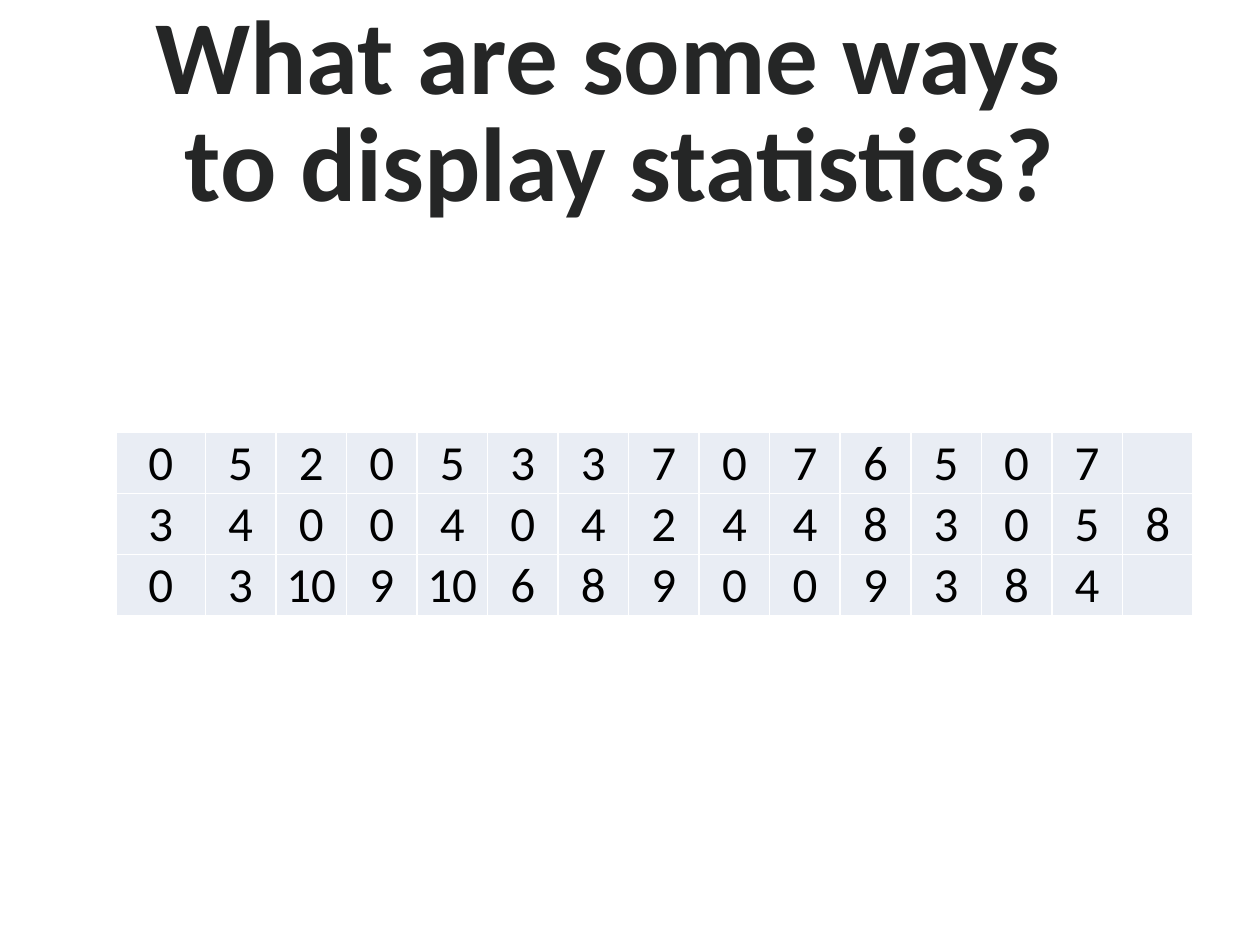
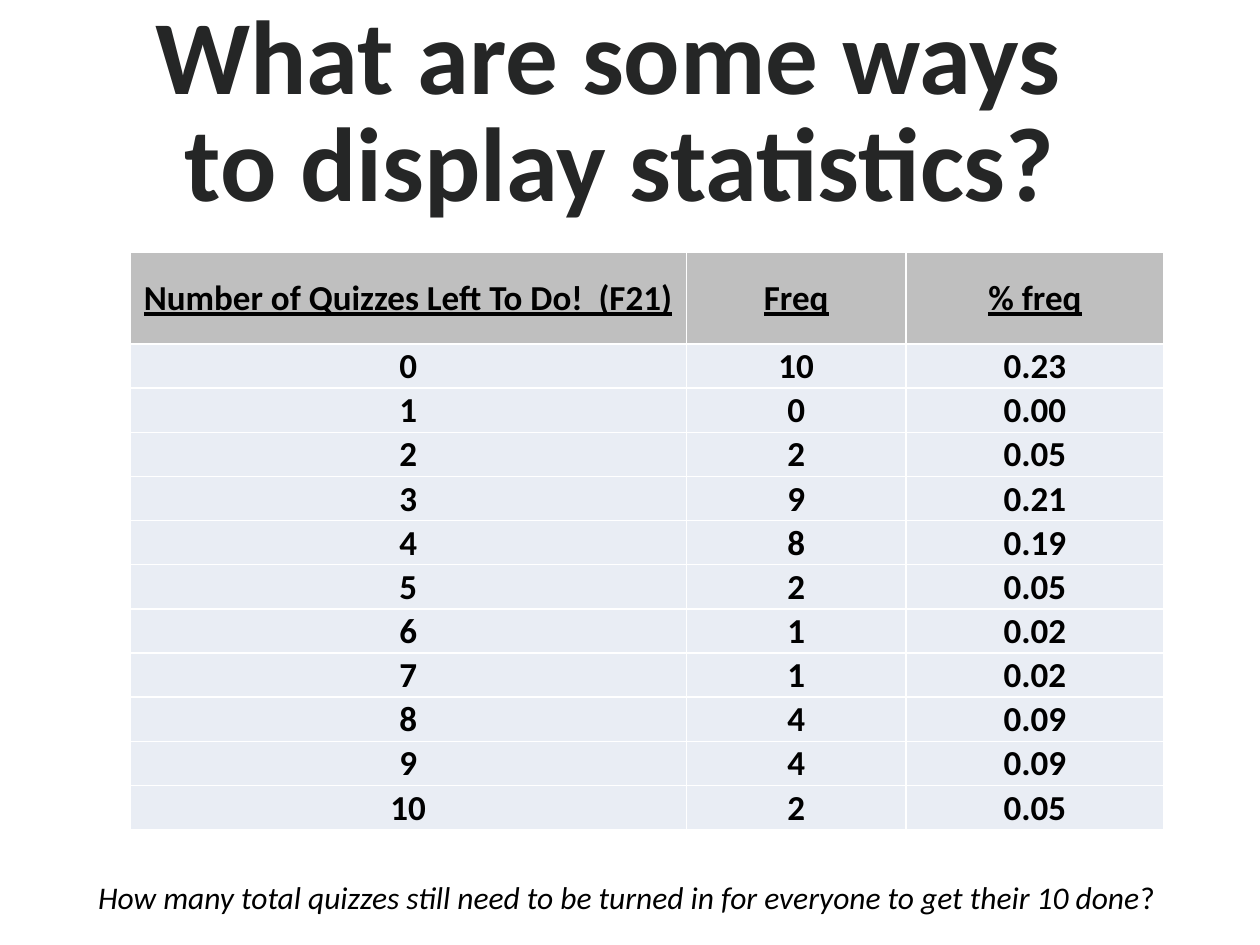
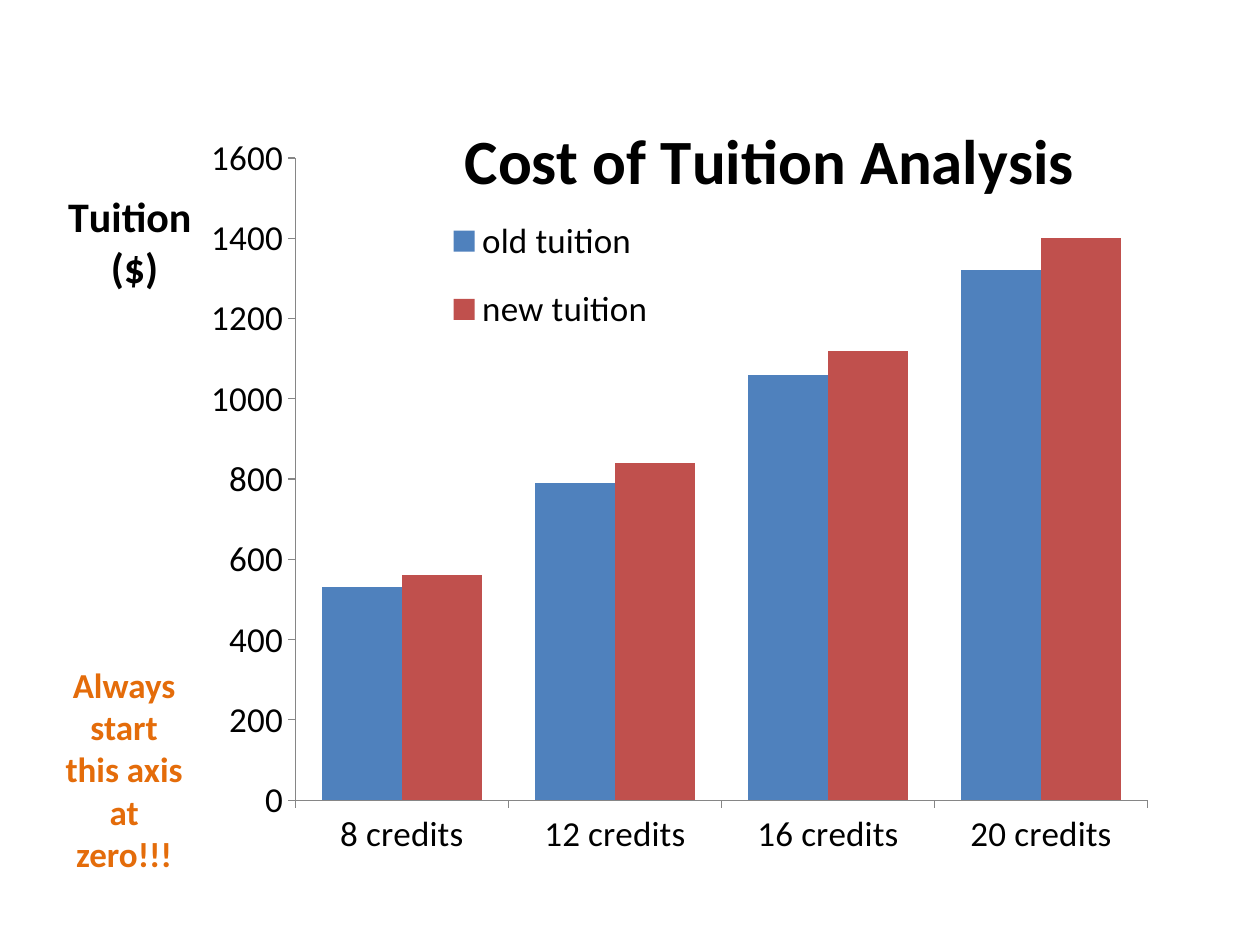
from lxml.etree import SubElement
from pptx import Presentation
from pptx.chart.data import CategoryChartData
from pptx.dml.color import RGBColor
from pptx.enum.chart import XL_CHART_TYPE, XL_LEGEND_POSITION, XL_TICK_MARK
from pptx.enum.text import MSO_ANCHOR, MSO_AUTO_SIZE, PP_ALIGN
from pptx.oxml import parse_xml
from pptx.oxml.ns import nsdecls, qn
from pptx.util import Inches, Pt

FONT = "Calibri"
COLORS = {
    "title": "252626",
    "text": "000000",
    "cell": "E9EDF4",
    "header": "BFBFBF",
    "old": "4F81BD",
    "new": "C0504D",
    "note": "E46C0A",
    "axis": "868686",
}
TITLE_ONLY, BLANK = 5, 6
TITLE_LINES = ["What are some ways ", "to display statistics?"]
TITLE_BOX = (0.42, 0.58, 9, 1.83)
LINE = 20.4

QUIZZES_LEFT = [
    "0 5 2 0 5 3 3 7 0 7 6 5 0 7".split(),
    "3 4 0 0 4 0 4 2 4 4 8 3 0 5 8".split(),
    "0 3 10 9 10 6 8 9 0 0 9 3 8 4".split(),
]
FREQ_HEADER = ["Number of Quizzes Left To Do!  (F21)", "Freq", "% freq"]
FREQUENCIES = [10, 0, 2, 9, 8, 2, 1, 1, 4, 4, 2]
CREDITS = ["8 credits", "12 credits", "16 credits", "20 credits"]
TUITION = {"old": [530, 790, 1060, 1320], "new": [560, 840, 1120, 1400]}


def color(name):
    return RGBColor.from_string(COLORS[name])


def style_font(font, size, name="text", bold=False, italic=False):
    font.name = FONT
    font.size = Pt(size)
    font.bold = bold
    font.italic = italic
    font.color.rgb = color(name)


def add_title_slide(prs):
    s = prs.slides.add_slide(prs.slide_layouts[TITLE_ONLY])
    title = s.shapes.title
    title.left, title.top, title.width, title.height = map(Inches, TITLE_BOX)
    tf = title.text_frame
    tf.text = "\n".join(TITLE_LINES)
    tf.auto_size = MSO_AUTO_SIZE.NONE
    tf.vertical_anchor = MSO_ANCHOR.TOP
    for i, p in enumerate(tf.paragraphs):
        p.alignment = PP_ALIGN.CENTER
        p.line_spacing = Pt(LINE)
        p.space_before = Pt(2 * LINE * i)
        style_font(p.runs[0].font, 60, "title", bold=True)
    return s


def add_text(s, box, text, size, wrap=True, align=PP_ALIGN.LEFT, **style):
    tf = s.shapes.add_textbox(*map(Inches, box)).text_frame
    tf.word_wrap = wrap
    tf.auto_size = MSO_AUTO_SIZE.SHAPE_TO_FIT_TEXT
    p = tf.paragraphs[0]
    p.text = text
    p.alignment = align
    style_font(p.runs[0].font, size, **style)
    return p


def add_grid(s, box, rows, col_widths, size, bold=False, header_height=None):
    """Add a centred table; a header height turns the first row into a header."""
    table = s.shapes.add_table(len(rows), len(col_widths), *map(Inches, box)).table
    table.first_row = table.horz_banding = False
    for col, width in zip(table.columns, col_widths):
        col.width = Inches(width)
    if header_height:
        body_height = (box[3] - header_height) / (len(rows) - 1)
    else:
        body_height = box[3] / len(rows)
    for r, values in enumerate(rows):
        is_header = bool(header_height) and r == 0
        table.rows[r].height = Inches(header_height if is_header else body_height)
        for c in range(len(col_widths)):
            cell = table.cell(r, c)
            cell.fill.solid()
            cell.fill.fore_color.rgb = color("header" if is_header else "cell")
            if c >= len(values):
                continue
            cell.margin_left = cell.margin_right = cell.margin_top = Inches(0.01)
            cell.margin_bottom = 0
            cell.vertical_anchor = MSO_ANCHOR.MIDDLE
            p = cell.text_frame.paragraphs[0]
            p.text = str(values[c])
            p.alignment = PP_ALIGN.CENTER
            font = p.runs[0].font
            style_font(font, size, bold=bold)
            font.underline = is_header


def set_layout(element, index, inner=False, **shares):
    """Place a chart part by shares of the chart; index is its layout's child position."""
    old = element.find(qn("c:layout"))
    if old is not None:
        element.remove(old)
    layout = parse_xml(f"<c:layout {nsdecls('c')}><c:manualLayout/></c:layout>")
    settings = {"layoutTarget": "inner"} if inner else {}
    settings.update({f"{key}Mode": "edge" for key in "xy"})
    settings.update(shares)
    for tag, value in settings.items():
        SubElement(layout[0], qn(f"c:{tag}")).set("val", str(value))
    element.insert(index, layout)


def set_chart_title(title, text, size, x, y):
    tf = title.text_frame
    tf.text = text
    for p in tf.paragraphs:
        style_font(p.runs[0].font, size, bold=True)
    set_layout(title._element, 1, x=x, y=y)
    return tf


def add_tuition_chart(s, box):
    data = CategoryChartData()
    data.categories = CREDITS
    for name, values in TUITION.items():
        data.add_series(f"{name} tuition", values)
    frame = s.shapes.add_chart(XL_CHART_TYPE.COLUMN_CLUSTERED, *map(Inches, box), data)
    chart = frame.chart
    style_font(chart.font, 10)

    plot = chart.plots[0]
    plot.gap_width = 66
    plot.overlap = 0
    plot.vary_by_categories = False
    for series, name in zip(plot.series, TUITION):
        series.format.fill.solid()
        series.format.fill.fore_color.rgb = color(name)

    for axis in (chart.category_axis, chart.value_axis):
        axis.has_major_gridlines = False
        axis.major_tick_mark = XL_TICK_MARK.OUTSIDE
        axis.format.line.color.rgb = color("axis")
        style_font(axis.tick_labels.font, 20)
    values = chart.value_axis
    values.minimum_scale, values.maximum_scale, values.major_unit = 0, 1600, 200

    chart.has_title = True
    set_chart_title(chart.chart_title, "Cost of Tuition Analysis", 36, 0.35, 0.04)
    values.has_title = True
    tf = set_chart_title(values.axis_title, "Tuition\n ($)", 24, 0.01, 0.14)
    body = tf._txBody.bodyPr
    body.set("rot", "0")
    body.set("vert", "horz")

    chart.has_legend = True
    legend = chart.legend
    legend.position = XL_LEGEND_POSITION.RIGHT
    legend.include_in_layout = False
    style_font(legend.font, 20)
    set_layout(legend._element, 1, x=0.31, y=0.15, w=0.25, h=0.2)
    plot_area = chart._chartSpace.chart.plotArea
    set_layout(plot_area, 0, inner=True, x=0.212, y=0.105, w=0.745, h=0.794)


def raw_data_slide(prs):
    s = add_title_slide(prs)
    add_grid(s, (0.92, 3.43, 8.58, 1.43), QUIZZES_LEFT, [0.71] + [0.56] * 14, 28)


def frequency_slide(prs):
    s = add_title_slide(prs)
    total = sum(FREQUENCIES)
    rows = [FREQ_HEADER] + [
        [left, freq, f"{freq / total:.2f}"] for left, freq in enumerate(FREQUENCIES)
    ]
    add_grid(s, (1.03, 2, 8.21, 4.51), rows, [4.42, 1.74, 2.05], 20,
             bold=True, header_height=0.73)
    question = "How many total quizzes still need to be turned in for everyone to get their 10 done"
    p = add_text(s, (0.68, 6.92, 8.92, 0.4), question, 18, wrap=False, italic=True)
    r = p.add_run()
    r.text = "?"
    style_font(r.font, 18)


def tuition_slide(prs):
    s = prs.slides.add_slide(prs.slide_layouts[BLANK])
    add_tuition_chart(s, (0.42, 0.58, 9.08, 6.42))
    add_text(s, (0.38, 5.22, 1.21, 1.78), "Always start this axis at zero!!!", 20,
             align=PP_ALIGN.CENTER, name="note", bold=True)


def main():
    prs = Presentation()
    prs.slide_width, prs.slide_height = Inches(10), Inches(7.5)
    for build in (raw_data_slide, frequency_slide, tuition_slide):
        build(prs)
    prs.save("out.pptx")


if __name__ == "__main__":
    main()
